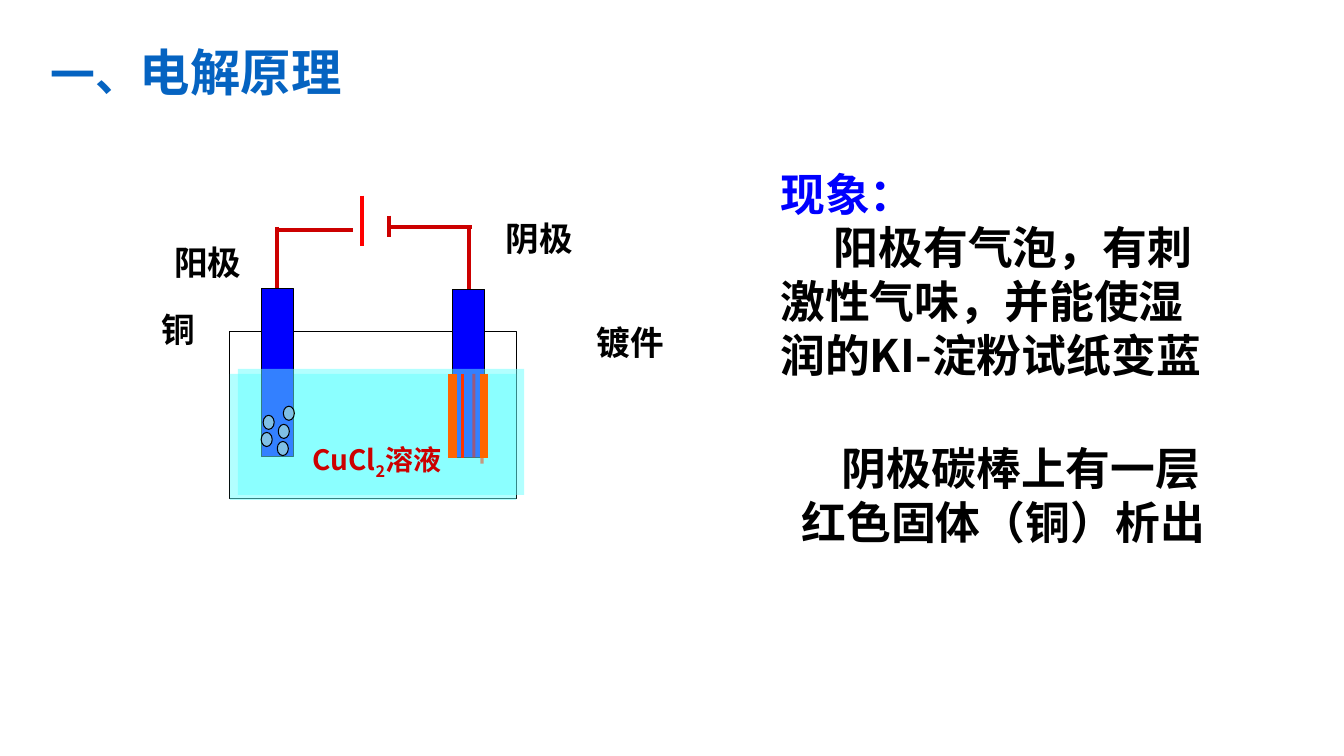
from lxml import etree
from pptx import Presentation
from pptx.dml.color import RGBColor
from pptx.enum.shapes import MSO_CONNECTOR, MSO_SHAPE
from pptx.enum.text import MSO_ANCHOR, PP_ALIGN
from pptx.oxml.ns import qn
from pptx.util import Inches, Pt

RECTANGLE, OVAL = MSO_SHAPE.RECTANGLE, MSO_SHAPE.OVAL
STRAIGHT = MSO_CONNECTOR.STRAIGHT
TOP, MIDDLE = MSO_ANCHOR.TOP, MSO_ANCHOR.MIDDLE
LEFT, JUSTIFY = PP_ALIGN.LEFT, PP_ALIGN.JUSTIFY

FONT = "Noto Sans CJK SC"
BLACK, WHITE, BLUE = "000000", "FFFFFF", "0000FF"
TITLE_BLUE, WIRE_RED, WATER = "0563C1", "CC0000", "66FFFF"
COPPER, COPPER_RED = "FF6600", "FF3300"
TOP_SIDE = 0


def grid(cells):
    """Length of a number of grid cells, ten to the inch."""
    return Inches(cells / 10)


def color(hex_string):
    return RGBColor.from_string(hex_string)


def set_alpha(format_element, percent):
    for color_element in format_element.iter(qn("a:srgbClr")):
        alpha = etree.SubElement(color_element, qn("a:alpha"))
        alpha.set("val", str(percent * 1000))


def add_block(slide, kind, left, top, width, height, fill, outlined=True, alpha=None):
    shape = slide.shapes.add_shape(kind, *map(grid, (left, top, width, height)))
    shape.shadow.inherit = False
    shape.fill.solid()
    shape.fill.fore_color.rgb = color(fill)
    if alpha:
        set_alpha(shape.fill._xPr.find(qn("a:solidFill")), alpha)
    if outlined:
        shape.line.color.rgb = color(BLACK)
        shape.line.width = Pt(0.75)
    else:
        shape.line.fill.background()
    return shape


def add_line(slide, start, end, stroke, width=3, alpha=None):
    connector = slide.shapes.add_connector(STRAIGHT, *map(grid, (*start, *end)))
    connector.line.color.rgb = color(stroke)
    connector.line.width = Pt(width)
    properties = connector._element.spPr
    if alpha:
        set_alpha(properties, alpha)
    etree.SubElement(properties, qn("a:effectLst"))
    return connector


def style_font(font, size, fill):
    font.size, font.bold, font.name = Pt(size), True, FONT
    font.color.rgb = color(fill)
    east_asian = etree.SubElement(font._element, qn("a:ea"))
    east_asian.set("typeface", FONT)


def add_text_box(slide, left, top, width, height, anchor=TOP):
    box = slide.shapes.add_textbox(*map(grid, (left, top, width, height)))
    box.text_frame.word_wrap = True
    box.text_frame.vertical_anchor = anchor
    return box.text_frame


def write(paragraph, text, size, fill, indent=0, align=LEFT):
    """Fill a paragraph whose first line is indented by some grid cells."""
    paragraph.text = text
    paragraph.alignment = align
    style_font(paragraph.font, size, fill)
    paragraph._p.get_or_add_pPr().set("indent", str(grid(indent)))


def add_title(slide):
    paragraph = add_text_box(slide, 0, 3.7, 43.3, 7.6, MIDDLE).paragraphs[0]
    write(paragraph, "", 36, TITLE_BLUE, indent=4)
    paragraph.line_spacing = 0.9
    for text, size in (("一、", 32), ("电解原理", 36)):
        run = paragraph.add_run()
        run.text = text
        run.font.size = Pt(size)


def add_observations(slide):
    anode_text = add_text_box(slide, 76.4, 16, 45, 22.6)
    write(anode_text.paragraphs[0], "现象：", 32, BLUE)
    write(anode_text.add_paragraph(),
          "阳极有气泡，有刺激性气味，并能使湿润的KI-淀粉试纸变蓝", 32, BLACK, indent=5.3)
    cathode_text = add_text_box(slide, 78.5, 43.2, 42.9, 11.8)
    write(cathode_text.paragraphs[0],
          "阴极碳棒上有一层红色固体（铜）析出", 32, BLACK, indent=4)


def add_cell(slide):
    """Draw the beaker, both electrodes, the solution and the bubbles."""
    add_block(slide, RECTANGLE, 22.8, 32.9, 28.4, 16.6, WHITE)
    add_block(slide, RECTANGLE, 22.8, 37.1, 28.4, 12.5, WATER, False, 50)
    cathode = add_block(slide, RECTANGLE, 44.9, 28.7, 3.2, 16.7, BLUE)
    anode = add_block(slide, RECTANGLE, 25.9, 28.6, 3.2, 16.7, BLUE)
    add_block(slide, RECTANGLE, 23.6, 36.6, 28.4, 12.5, WATER, False, 50)
    for left, top in ((28.1, 40.3), (27.6, 42.1), (25.9, 42.9), (26.1, 41.2), (27.5, 43.8)):
        add_block(slide, OVAL, left, top, 1.1, 1.4, "CCFFCC", alpha=50)
    return anode, cathode


def add_copper_layer(slide):
    for x, top, stroke, width, alpha in (
        (47, 37.1, COPPER_RED, 2.25, 50),
        (45.9, 37.1, COPPER_RED, 2.25, None),
        (47.8, 37.7, COPPER_RED, 2.25, 50),
        (48, 37.1, COPPER, 6, None),
        (44.9, 37.1, COPPER, 6, None),
    ):
        add_line(slide, (x, top), (x, top + 8.3), stroke, width, alpha)


def add_circuit(slide, anode, cathode):
    for electrode, x, top in ((anode, 27.5, 28.6), (cathode, 46.5, 28.7)):
        wire = add_line(slide, (x, 22.5), (x, top), WIRE_RED)
        wire.end_connect(electrode, TOP_SIDE)
    add_line(slide, (27.5, 22.8), (35, 22.8), WIRE_RED)
    add_line(slide, (38.6, 22.5), (46.8, 22.5), WIRE_RED)
    add_line(slide, (38.6, 21.4), (38.6, 23.5), WIRE_RED)
    add_line(slide, (35.9, 19.4), (35.9, 24.4), "FF0000")


def add_labels(slide):
    for text, left, top, width, height in (
        ("阴极", 49.2, 21.1, 11.2, 6.1),
        ("阳极", 16.3, 23.5, 10.3, 6.1),
        ("铜", 15, 30.2, 6.9, 7.2),
        ("镀件", 58.2, 31.4, 11.2, 7.2),
    ):
        frame = add_text_box(slide, left, top, width, height)
        write(frame.paragraphs[0], text, 24, BLACK, align=JUSTIFY)
    solution = add_text_box(slide, 30, 43.4, 18, 4.3).paragraphs[0]
    write(solution, "", 20, WIRE_RED)
    for text, baseline in (("CuCl", 0), ("2", -25000), ("溶液", 0)):
        run = solution.add_run()
        run.text = text
        if baseline:
            run.font._element.set("baseline", str(baseline))


def main():
    presentation = Presentation()
    presentation.slide_width, presentation.slide_height = Inches(13.33), Inches(7.5)
    slide = presentation.slides.add_slide(presentation.slide_layouts[6])
    add_title(slide)
    add_observations(slide)
    anode, cathode = add_cell(slide)
    add_copper_layer(slide)
    add_circuit(slide, anode, cathode)
    add_labels(slide)
    presentation.save("out.pptx")


if __name__ == "__main__":
    main()
